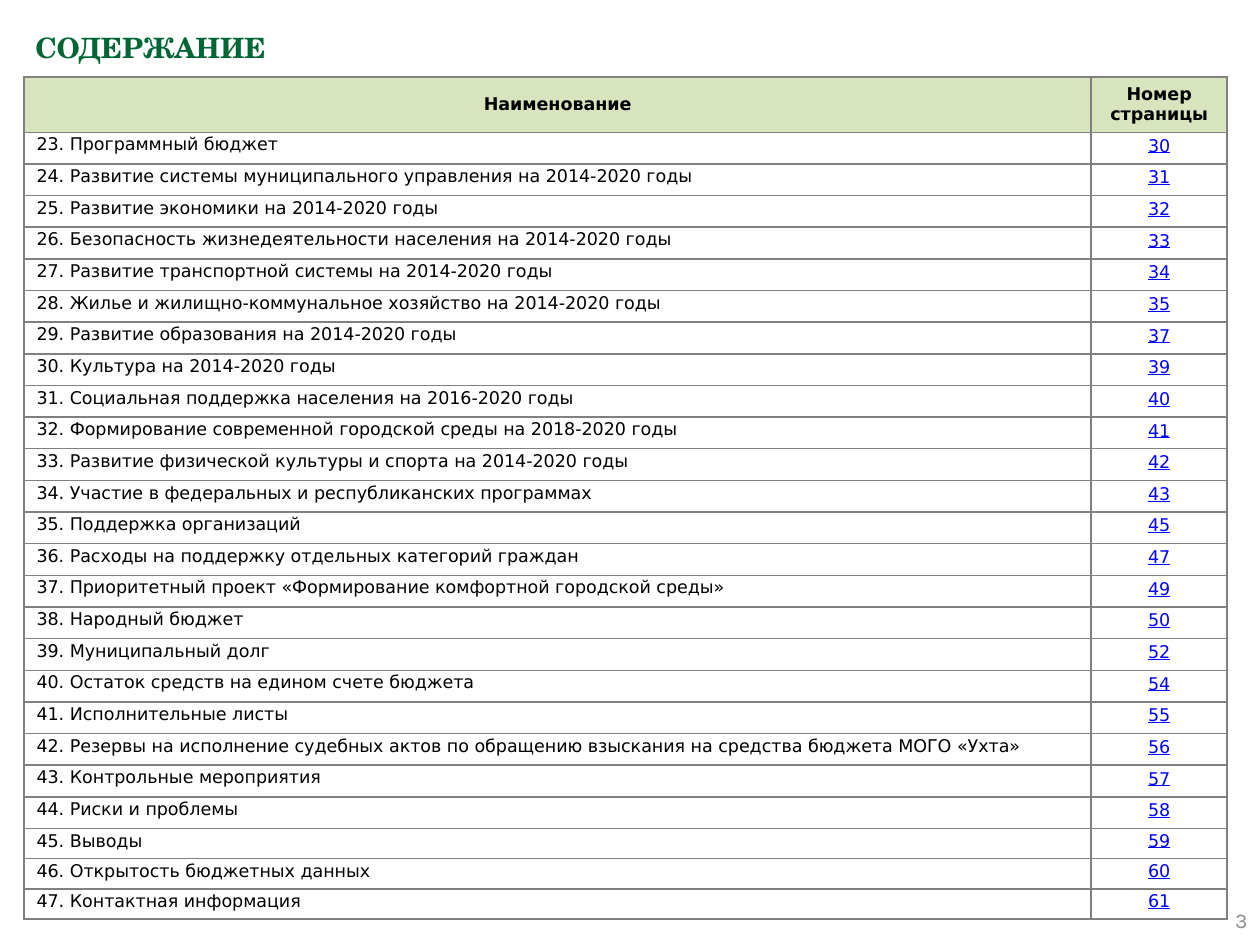
from lxml.etree import SubElement
from pptx import Presentation
from pptx.dml.color import RGBColor
from pptx.enum.text import MSO_ANCHOR, MSO_AUTO_SIZE, PP_ALIGN
from pptx.oxml.ns import qn
from pptx.util import Inches, Pt

COLORS = {
    "title": "006633",
    "text": "000000",
    "link": "0000FF",
    "header": "D7E4BD",
    "border": "808080",
    "number": "8C8C8C",
}
FIRST_ITEM = 23
HEADER = ("Наименование", "Номер страницы")
CONTENTS = [
    ("Программный бюджет", 30),
    ("Развитие системы муниципального управления на 2014-2020 годы", 31),
    ("Развитие экономики на 2014-2020 годы", 32),
    ("Безопасность жизнедеятельности населения на 2014-2020 годы", 33),
    ("Развитие транспортной системы на 2014-2020 годы", 34),
    ("Жилье и жилищно-коммунальное хозяйство на 2014-2020 годы", 35),
    ("Развитие образования на 2014-2020 годы", 37),
    ("Культура на 2014-2020 годы", 39),
    ("Социальная поддержка населения на 2016-2020 годы", 40),
    ("Формирование современной городской среды на 2018-2020 годы", 41),
    ("Развитие физической культуры и спорта на 2014-2020 годы", 42),
    ("Участие в федеральных и республиканских программах", 43),
    ("Поддержка организаций", 45),
    ("Расходы на поддержку отдельных категорий граждан", 47),
    ("Приоритетный проект «Формирование комфортной городской среды»", 49),
    ("Народный бюджет", 50),
    ("Муниципальный долг", 52),
    ("Остаток средств на едином счете бюджета", 54),
    ("Исполнительные листы", 55),
    ("Резервы на исполнение судебных актов по обращению взыскания "
     "на средства бюджета МОГО «Ухта»", 56),
    ("Контрольные мероприятия", 57),
    ("Риски и проблемы", 58),
    ("Выводы", 59),
    ("Открытость бюджетных данных", 60),
    ("Контактная информация", 61),
]


def write(tf, text, size=10, font="DejaVu Sans", color="text", bold=False,
          underline=False, align=PP_ALIGN.LEFT, spacing=None):
    tf.word_wrap = True
    p = tf.paragraphs[0]
    p.alignment = align
    if spacing:
        p.line_spacing = spacing
    r = p.add_run()
    r.text = text
    r.font.size = Pt(size)
    r.font.name = font
    r.font.bold = bold
    r.font.underline = underline
    r.font.color.rgb = RGBColor.from_string(COLORS[color])


def set_borders(cell, color, width):
    tc_pr = cell._tc.get_or_add_tcPr()
    for i, side in enumerate(("a:lnL", "a:lnR", "a:lnT", "a:lnB")):
        ln = tc_pr.makeelement(qn(side), {"w": str(Pt(width))})
        fill = SubElement(ln, qn("a:solidFill"))
        SubElement(fill, qn("a:srgbClr"), val=COLORS[color])
        tc_pr.insert(i, ln)


def format_cell(cell, margin, fill=None, anchor=MSO_ANCHOR.TOP):
    cell.margin_left = cell.margin_right = Inches(0.1)
    cell.margin_top = cell.margin_bottom = Inches(margin)
    cell.vertical_anchor = anchor
    if fill:
        cell.fill.solid()
        cell.fill.fore_color.rgb = RGBColor.from_string(COLORS[fill])
    else:
        cell.fill.background()
    set_borders(cell, "border", 1)


def add_title(s, left, top, width, height):
    sp = s.shapes.title
    sp.left, sp.top, sp.width, sp.height = left, top, width, height
    tf = sp.text_frame
    tf.auto_size = MSO_AUTO_SIZE.NONE
    tf.vertical_anchor = MSO_ANCHOR.TOP
    write(tf, "СОДЕРЖАНИЕ", size=16, font="TeX Gyre Schola", color="title",
          bold=True, spacing=1.2)


def add_contents(s, left, top, width, height):
    table = s.shapes.add_table(len(CONTENTS) + 1, 2, left, top, width, height).table
    table.horz_banding = False
    page_width = Inches(1.08)
    table.columns[0].width = width - page_width
    table.columns[1].width = page_width

    # The header and the last rows are fixed, the others share the rest
    header_height, last_height, last_count = Inches(0.44), Inches(0.24), 3
    regular_count = len(CONTENTS) - last_count
    rest = height - header_height - last_count * last_height
    heights = ([header_height] + [rest // regular_count] * regular_count
               + [last_height] * last_count)
    for row, row_height in zip(table.rows, heights):
        row.height = row_height

    # Header
    for col, text in enumerate(HEADER):
        cell = table.cell(0, col)
        format_cell(cell, 0.03, fill="header", anchor=MSO_ANCHOR.MIDDLE)
        write(cell.text_frame, text, bold=True, align=PP_ALIGN.CENTER)

    # Sections and their pages
    for row, (name, page) in enumerate(CONTENTS, start=1):
        name_cell, page_cell = table.cell(row, 0), table.cell(row, 1)
        format_cell(name_cell, 0.02)
        write(name_cell.text_frame, f"{FIRST_ITEM + row - 1}. {name}")
        format_cell(page_cell, 0.03 if row <= regular_count else 0.02)
        write(page_cell.text_frame, str(page), color="link", underline=True,
              align=PP_ALIGN.CENTER)


def add_page_number(s, left, top, width, height):
    tf = s.shapes.add_textbox(left, top, width, height).text_frame
    tf.vertical_anchor = MSO_ANCHOR.MIDDLE
    write(tf, "3", size=12, font="Karla", color="number", align=PP_ALIGN.RIGHT)


def main():
    prs = Presentation()
    prs.slide_width, prs.slide_height = Inches(10), Inches(7.5)
    s = prs.slides.add_slide(prs.slide_layouts[5])
    add_title(s, Inches(0.18), Inches(0.14), Inches(6.02), Inches(1.15))
    add_contents(s, Inches(0.19), Inches(0.61), Inches(9.55), Inches(6.69))
    add_page_number(s, Inches(7.67), Inches(7.1), Inches(2.33), Inches(0.4))
    prs.save("out.pptx")


if __name__ == "__main__":
    main()
